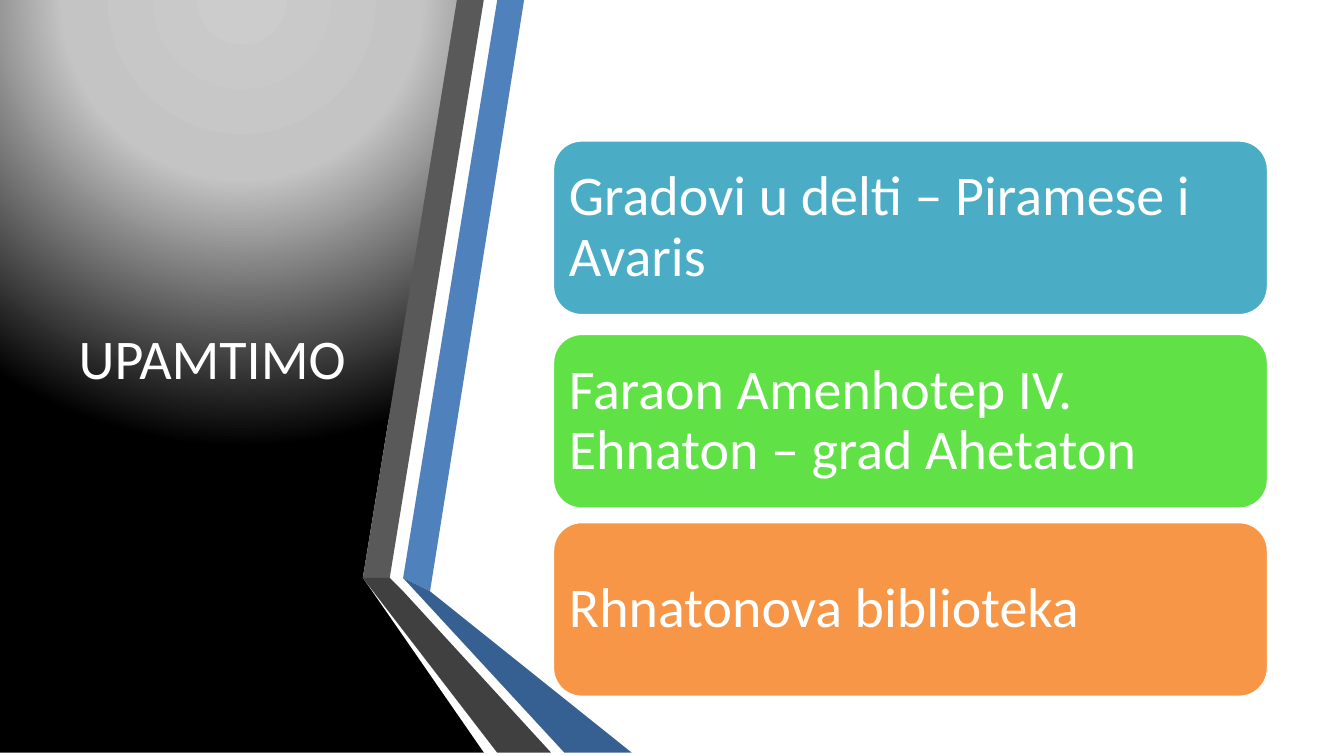
from dataclasses import dataclass

from lxml import etree
from pptx import Presentation
from pptx.dml.color import RGBColor
from pptx.enum.shapes import MSO_SHAPE as Preset
from pptx.enum.text import MSO_ANCHOR as Anchor, PP_ALIGN as Align
from pptx.oxml.ns import qn
from pptx.util import Inches, Pt


@dataclass(frozen=True)
class Theme:
    font: str = "Calibri"
    text_size: int = 30
    outline: int = 2
    white: str = "FFFFFF"
    blue: str = "4F81BD"
    blue_shade: str = "376092"
    blue_dark: str = "254061"
    gray: str = "595959"
    gray_shade: str = "404040"
    gray_dark: str = "262626"
    teal: str = "4BACC6"
    green: str = "60E146"
    orange: str = "F79646"
    glow: tuple = ((0, "CCCCCC"), (40, "C4C4C4"), (100, "000000"))


THEME = Theme()
WIDTH, HEIGHT = Inches(10), Inches(5.625)
COLUMNS = 100
UNIT = WIDTH // COLUMNS
BOTTOM = HEIGHT / UNIT


def grid(*values):
    return [round(value * UNIT) for value in values]


def paint(shape, color):
    shape.shadow.inherit = False
    shape.fill.solid()
    shape.fill.fore_color.rgb = RGBColor.from_string(color)


def add_outline(slide, points, color):
    builder = slide.shapes.build_freeform(*points[0], scale=UNIT)
    builder.add_line_segments(points[1:], close=True)
    shape = builder.convert_to_shape()
    paint(shape, color)
    shape.line.fill.background()
    return shape


def set_radial_fill(shape, stops, focus):
    properties = shape.fill._xPr
    solid = properties.find(qn("a:solidFill"))
    gradient = etree.Element(qn("a:gradFill"), rotWithShape="1")
    stop_list = etree.SubElement(gradient, qn("a:gsLst"))
    for position, color in stops:
        stop = etree.SubElement(stop_list, qn("a:gs"), pos=str(position * 1000))
        etree.SubElement(stop, qn("a:srgbClr"), val=color)
    circle = etree.SubElement(gradient, qn("a:path"), path="circle")
    edges = {side: str(share * 1000) for side, share in zip("ltrb", focus)}
    etree.SubElement(circle, qn("a:fillToRect"), edges)
    properties.replace(solid, gradient)


def write_text(shape, text, align=Align.LEFT, spacing=1.0, margin=None):
    frame = shape.text_frame
    frame.word_wrap = True
    frame.vertical_anchor = Anchor.MIDDLE
    if margin is not None:
        frame.margin_left = frame.margin_right = margin
        frame.margin_top = frame.margin_bottom = margin
    paragraph = frame.paragraphs[0]
    paragraph.text = text
    paragraph.alignment = align
    paragraph.line_spacing = spacing
    font = paragraph.font
    font.name = THEME.font
    font.size = Pt(THEME.text_size)
    font.color.rgb = RGBColor.from_string(THEME.white)


def add_panel(slide):
    points = [(0, 0), (33.6, 0), (26.7, 43.1), (26.7, 43.2), (36.1, BOTTOM), (0, BOTTOM)]
    panel = add_outline(slide, points, THEME.white)
    set_radial_fill(panel, THEME.glow, focus=(50, -80, 50, 180))


def add_ribbons(slide):
    gray_left, gray_right = (27.2, 43), (29.2, 43.3)
    blue_left, blue_right = (29.7, 43.4), (31.7, 43.7)
    ribbons = [
        ([blue_left, blue_right, (38.9, 0), (36.8, 0)], THEME.blue),
        ([gray_left, gray_right, (36.4, 0), (34.3, 0)], THEME.gray),
        ([gray_left, (36.8, BOTTOM), (37.3, BOTTOM)], THEME.gray_dark),
        ([blue_left, (41.5, BOTTOM), (42, BOTTOM)], THEME.blue_dark),
        ([blue_left, (42, BOTTOM), (47.2, BOTTOM), blue_right], THEME.blue_shade),
        ([gray_left, (37.3, BOTTOM), (41.1, BOTTOM), (29.6, 43.7), gray_right], THEME.gray_shade),
    ]
    for points, color in ribbons:
        add_outline(slide, points, color)


def add_title(slide, text):
    title = slide.shapes.add_textbox(*grid(4.4, 5.6, 22.8, 41.9))
    write_text(title, text, align=Align.CENTER)


def add_card(slide, top, text, color):
    card = slide.shapes.add_shape(Preset.ROUNDED_RECTANGLE, *grid(41.1, top, 53.3, 13.1))
    paint(card, color)
    card.line.color.rgb = RGBColor.from_string(THEME.white)
    card.line.width = Pt(THEME.outline)
    write_text(card, text, spacing=0.9, margin=grid(0.6)[0])


def main():
    presentation = Presentation()
    presentation.slide_width, presentation.slide_height = WIDTH, HEIGHT
    slide = presentation.slides.add_slide(presentation.slide_layouts[6])
    add_panel(slide)
    add_ribbons(slide)
    add_title(slide, "UPAMTIMO")
    cards = [
        (10.4, "Gradovi u delti – Piramese i Avaris", THEME.teal),
        (24.8, "Faraon Amenhotep IV. Ehnaton – grad Ahetaton", THEME.green),
        (38.8, "Rhnatonova biblioteka", THEME.orange),
    ]
    for top, text, color in cards:
        add_card(slide, top, text, color)
    presentation.save("out.pptx")


if __name__ == "__main__":
    main()
